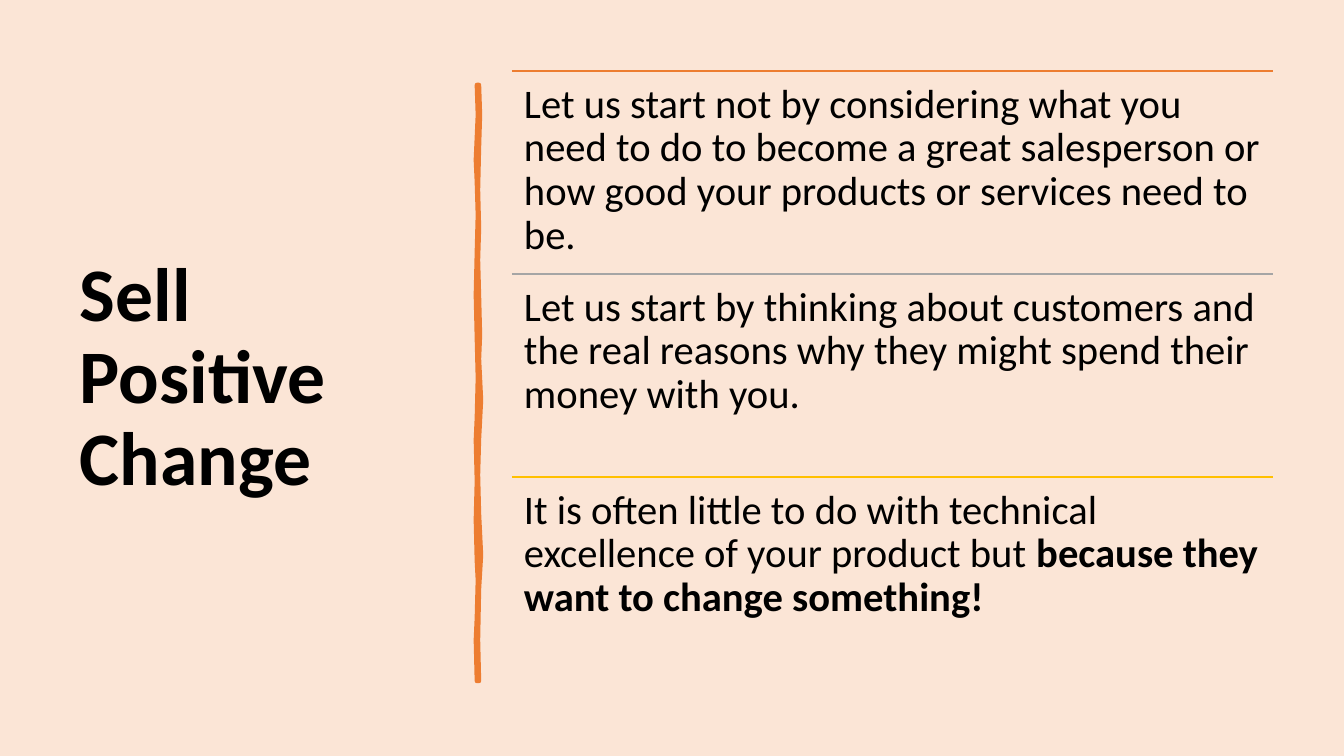
from lxml.etree import SubElement
from pptx import Presentation
from pptx.dml.color import RGBColor
from pptx.enum.shapes import MSO_CONNECTOR as CONNECTOR
from pptx.enum.text import MSO_ANCHOR as ANCHOR
from pptx.oxml.ns import qn
from pptx.util import Emu, Pt

WIDTH, HEIGHT = 1344, 756
EMU_PER_PX = 12192000 / WIDTH
COLORS = {
    "background": "FBE5D6",
    "text": "000000",
    "orange": "ED7D31",
    "gray": "A5A5A5",
    "gold": "FFC000",
}

ROW_LEFT, ROW_TOP, ROW_WIDTH, ROW_PITCH = 512, 71, 761, 203
# Each row: rule colour, then runs of (text, bold)
ROWS = [
    ("orange", [("Let us start not by considering what you need to do to become a great "
                 "salesperson or how good your products or services need to be.", False)]),
    ("gray", [("Let us start by thinking about customers and the real reasons why they "
               "might spend their money with you.", False)]),
    ("gold", [("It is often little to do with technical excellence of your product but ", False),
              ("because they want to change something!", True)]),
]

STROKE_RIGHT = [
    (479, 85), (480, 115), (479, 147), (478, 190), (479, 228), (478, 260),
    (479, 296), (480, 335), (479, 359), (481, 400), (479, 439), (478, 475),
    (479, 514), (481, 555), (479, 589), (478, 640), (479, 681),
]
STROKE_LEFT = [
    (477, 681), (476, 640), (477, 618), (478, 580), (477, 561), (476, 520),
    (477, 481), (476, 440), (477, 418), (478, 378), (477, 338), (476, 295),
    (477, 252), (478, 215), (477, 182), (476, 160), (478, 115), (477, 85),
]


def px(n):
    return Emu(round(n * EMU_PER_PX))


def rgb(name):
    return RGBColor.from_string(COLORS[name])


class SlideBuilder:
    font = "Calibri"
    line_spacing = 0.9

    def __init__(self, slide):
        self.slide = slide
        self.shapes = slide.shapes

    def background(self, color):
        fill = self.slide.background.fill
        fill.solid()
        fill.fore_color.rgb = rgb(color)

    def text(self, box, runs, size, margins, anchor=ANCHOR.TOP):
        """Add one paragraph of (text, bold) runs; margins are (sides, top and bottom)."""
        tf = self.shapes.add_textbox(*map(px, box)).text_frame
        side, end = map(px, margins)
        frame = {
            "word_wrap": True, "vertical_anchor": anchor,
            "margin_left": side, "margin_right": side,
            "margin_top": end, "margin_bottom": end,
        }
        for name, value in frame.items():
            setattr(tf, name, value)
        p = tf.paragraphs[0]
        p.line_spacing = self.line_spacing
        for content, bold in runs:
            r = p.add_run()
            r.text = content
            for name, value in {"name": self.font, "size": Pt(size), "bold": bold}.items():
                setattr(r.font, name, value)
            r.font.color.rgb = rgb("text")

    def rule(self, left, top, width, color):
        line = self.shapes.add_connector(
            CONNECTOR.STRAIGHT, px(left), px(top), px(left + width), px(top))
        line.line.color.rgb = rgb(color)
        line.line.width = Pt(1)
        SubElement(line._element.spPr, qn("a:effectLst"))

    def brush_stroke(self, points, color, weight):
        """Add a closed outline, filled and drawn with rounded joins."""
        start, *rest = points
        builder = self.shapes.build_freeform(*start, scale=EMU_PER_PX)
        builder.add_line_segments(rest, close=True)
        sp = builder.convert_to_shape()
        sp.shadow.inherit = False
        sp.fill.solid()
        sp.fill.fore_color.rgb = rgb(color)
        sp.line.color.rgb = rgb(color)
        sp.line.width = Pt(weight)
        SubElement(sp.line._get_or_add_ln(), qn("a:round"))


def main():
    prs = Presentation()
    prs.slide_width, prs.slide_height = px(WIDTH), px(HEIGHT)
    s = SlideBuilder(prs.slides.add_slide(prs.slide_layouts[6]))
    s.background("background")
    s.text((70, 71, 377, 616), [("Sell Positive Change", True)], 54, (10, 5), ANCHOR.MIDDLE)
    s.brush_stroke(STROKE_RIGHT + STROKE_LEFT, "orange", 3.25)
    for i, (color, runs) in enumerate(ROWS):
        top = ROW_TOP + i * ROW_PITCH
        s.rule(ROW_LEFT, top, ROW_WIDTH, color)
        s.text((ROW_LEFT, top, ROW_WIDTH, ROW_PITCH), runs, 29, (12, 12))
    prs.save("out.pptx")


if __name__ == "__main__":
    main()
